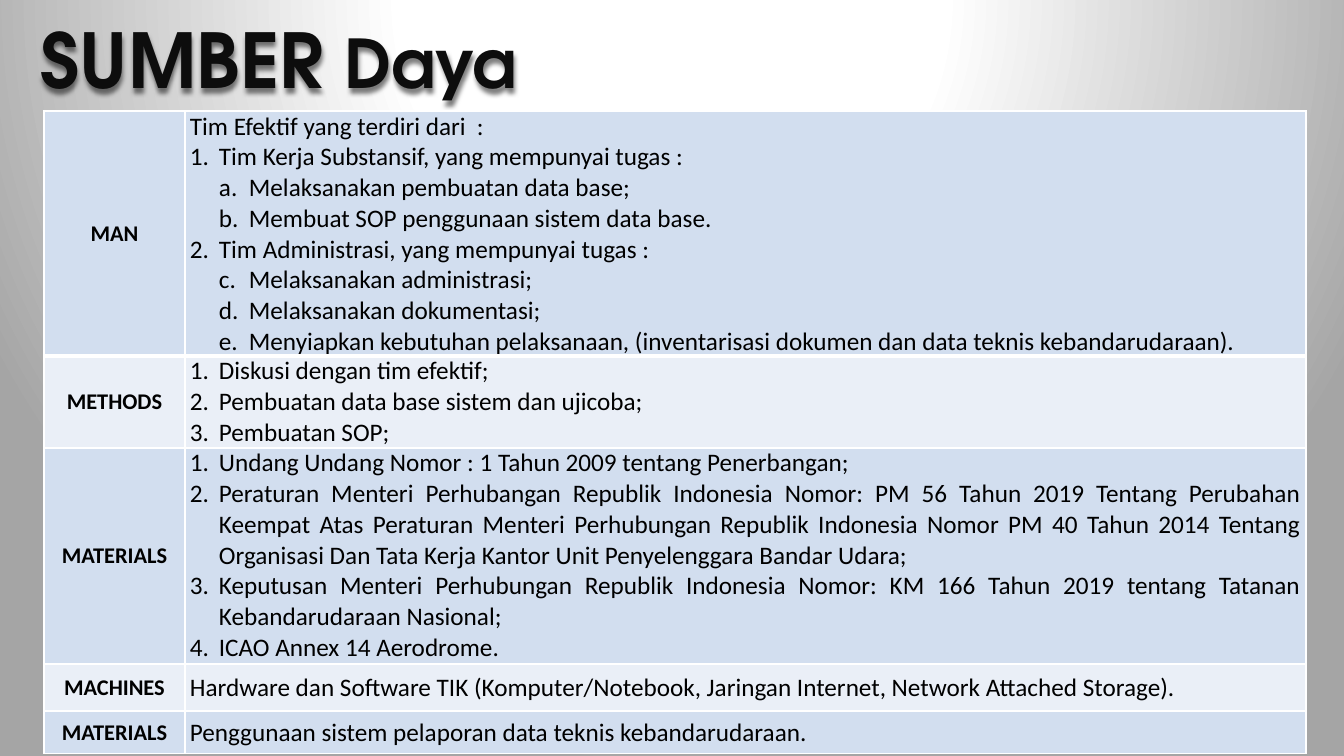
from dataclasses import dataclass

from pptx import Presentation, oxml
from pptx import util as u
from pptx.dml import color
from pptx.enum import text
from pptx.oxml import ns

EMU_PER_PX = 914400 / 100.8


@dataclass(frozen=True)
class Theme:
    title_font: str = "TeX Gyre Adventor"
    body_font: str = "Calibri"
    title_size: int = 54
    title_small_size: int = 48
    label_size: int = 16
    body_size: int = 18
    title_ink: str = "0D0D0D"
    ink: str = "000000"
    border: str = "FFFFFF"
    bands: tuple = ("D2DEEF", "EAEFF7")
    glow: str = "FFFFFF"
    edge: str = "A5A5A5"


# Each line is (level, text); level 1 is numbered, a level-2 line starts with its letter's rank.
RESOURCES = [
    ("MAN", 245, [
        (0, "Tim Efektif yang terdiri dari  :"),
        (1, "1.\tTim Kerja Substansif, yang mempunyai tugas :"),
        (2, "Melaksanakan pembuatan data base;"),
        (2, "Membuat SOP penggunaan sistem data base."),
        (1, "2.\tTim Administrasi, yang mempunyai tugas :"),
        (3, "Melaksanakan administrasi;"),
        (3, "Melaksanakan dokumentasi;"),
        (3, "Menyiapkan kebutuhan pelaksanaan, (inventarisasi dokumen dan data teknis "
            "kebandarudaraan)."),
    ]),
    ("METHODS", 92, [
        (1, "1.\tDiskusi dengan tim efektif;"),
        (1, "2.\tPembuatan data base sistem dan ujicoba;"),
        (1, "3.\tPembuatan SOP;"),
    ]),
    ("MATERIALS", 216, [
        (1, "1.\tUndang Undang Nomor : 1 Tahun 2009 tentang Penerbangan;"),
        (1, "2.\tPeraturan Menteri Perhubangan Republik Indonesia Nomor: PM 56 Tahun 2019 "
            "Tentang Perubahan Keempat Atas Peraturan Menteri Perhubungan Republik Indonesia "
            "Nomor PM 40 Tahun 2014 Tentang Organisasi Dan Tata Kerja Kantor Unit "
            "Penyelenggara Bandar Udara;"),
        (1, "3.\tKeputusan Menteri Perhubungan Republik Indonesia Nomor: KM 166 Tahun 2019 "
            "tentang Tatanan Kebandarudaraan Nasional;"),
        (1, "4.\tICAO Annex 14 Aerodrome."),
    ]),
    ("MACHINES", 47, [
        (0, "Hardware dan Software TIK (Komputer/Notebook, Jaringan Internet, "
            "Network Attached Storage)."),
    ]),
    ("MATERIALS", 43, [
        (0, "Penggunaan sistem pelaporan data teknis kebandarudaraan."),
    ]),
]

# level: (left margin px, hanging indent px, first letter's rank or None)
LEVELS = {0: (0, 0, None), 1: (29, -29, None), 2: (59, -30, 1), 3: (59, -30, 3)}


def px(length):
    return u.Emu(round(length * EMU_PER_PX))


def assign(target, values):
    for name, value in values.items():
        setattr(target, name, value)


def element(xml):
    """Parse a fragment whose root tag ends at its first space or bracket."""
    spaces = ns.nsdecls("a", "p")
    end = min(xml.index(mark) for mark in " >" if mark in xml)
    return oxml.parse_xml(f"{xml[:end]} {spaces}{xml[end:]}")


class SlideBuilder:
    def __init__(self, deck, theme):
        self.theme = theme
        self.slide = deck.slides.add_slide(deck.slide_layouts[5])

    def background(self):
        stops = "".join(
            f'<a:gs pos="{at * 1000}"><a:srgbClr val="{tone}"/></a:gs>'
            for at, tone in ((0, self.theme.glow), (35, self.theme.glow), (100, self.theme.edge)))
        self.slide.element.cSld.insert(0, element(
            f'<p:bg ><p:bgPr><a:gradFill rotWithShape="1"><a:gsLst>{stops}</a:gsLst>'
            '<a:path path="circle"><a:fillToRect l="50000" t="-80000" r="50000" b="180000"/>'
            '</a:path></a:gradFill><a:effectLst/></p:bgPr></p:bg>'))

    def span(self, para, words, size, font, ink, bold):
        span = para.add_run()
        span.text = words
        assign(span.font, {"size": u.Pt(size), "name": font, "bold": bold})
        span.font.color.rgb = color.RGBColor.from_string(ink)

    def title(self, parts, left, top, width, height):
        box = self.slide.shapes.title
        assign(box, {"left": px(left), "top": px(top), "width": px(width), "height": px(height)})
        assign(box.text_frame, {"word_wrap": True, "auto_size": text.MSO_AUTO_SIZE.SHAPE_TO_FIT_TEXT,
                                "vertical_anchor": text.MSO_ANCHOR.TOP})
        para = box.text_frame.paragraphs[0]
        para.alignment = text.PP_ALIGN.RIGHT
        for words, size in parts:
            self.span(para, words, size, self.theme.title_font, self.theme.title_ink, True)
        box.element.spPr.append(element(
            '<a:effectLst ><a:outerShdw blurRad="38100" dist="38100" dir="5400000">'
            '<a:srgbClr val="000000"><a:alpha val="50000"/></a:srgbClr>'
            '</a:outerShdw></a:effectLst>'))

    def table(self, rows, left, top, widths):
        heights = [height for _, height, _ in rows]
        frame = self.slide.shapes.add_table(
            len(rows), len(widths), px(left), px(top), px(sum(widths)), px(sum(heights)))
        table = frame.table
        assign(table, {"first_row": False, "horz_banding": False})
        for column, width in zip(table.columns, widths):
            column.width = px(width)
        for index, (label, height, lines) in enumerate(rows):
            table.rows[index].height = px(height)
            label_cell, body_cell = table.rows[index].cells
            for cell in (label_cell, body_cell):
                self.cell(cell, index)
            label_cell.vertical_anchor = text.MSO_ANCHOR.MIDDLE
            if len(lines) == 1:
                body_cell.vertical_anchor = text.MSO_ANCHOR.MIDDLE
            para = label_cell.text_frame.paragraphs[0]
            para.alignment = text.PP_ALIGN.CENTER
            self.span(para, label, self.theme.label_size, self.theme.body_font,
                      self.theme.ink, True)
            self.lines(body_cell.text_frame, lines)

    def cell(self, cell, row):
        assign(cell, {"margin_left": px(5), "margin_right": px(5),
                      "margin_top": 0, "margin_bottom": 0})
        cell.fill.solid()
        cell.fill.fore_color.rgb = color.RGBColor.from_string(self.theme.bands[row % 2])
        weights = {"L": 1, "R": 1, "T": 3 if row == 1 else 1, "B": 3 if row == 0 else 1}
        properties = cell._tc.get_or_add_tcPr()
        for index, (side, weight) in enumerate(weights.items()):
            properties.insert(index, element(
                f'<a:ln{side} w="{u.Pt(weight)}"><a:solidFill>'
                f'<a:srgbClr val="{self.theme.border}"/></a:solidFill></a:ln{side}>'))

    def lines(self, frame, lines):
        for index, (level, words) in enumerate(lines):
            para = frame.add_paragraph() if index else frame.paragraphs[0]
            para.alignment = text.PP_ALIGN.JUSTIFY
            margin, indent, first = LEVELS[level]
            properties = para._p.get_or_add_pPr()
            properties.set("marL", str(px(margin)))
            properties.set("indent", str(px(indent)))
            if first:
                properties.append(element(
                    f'<a:buAutoNum type="alphaLcPeriod" startAt="{first}"/>'))
            self.span(para, words, self.theme.body_size, self.theme.body_font,
                      self.theme.ink, False)


def main():
    deck = Presentation()
    assign(deck, {"slide_width": px(1344), "slide_height": px(756)})
    theme = Theme()
    page = SlideBuilder(deck, theme)
    page.background()
    page.table(RESOURCES, 44, 111, (141, 1121))
    page.title([("SUMBER ", theme.title_size), ("Daya", theme.title_small_size)],
               -131, 8, 658, 102)
    deck.save("out.pptx")


if __name__ == "__main__":
    main()
